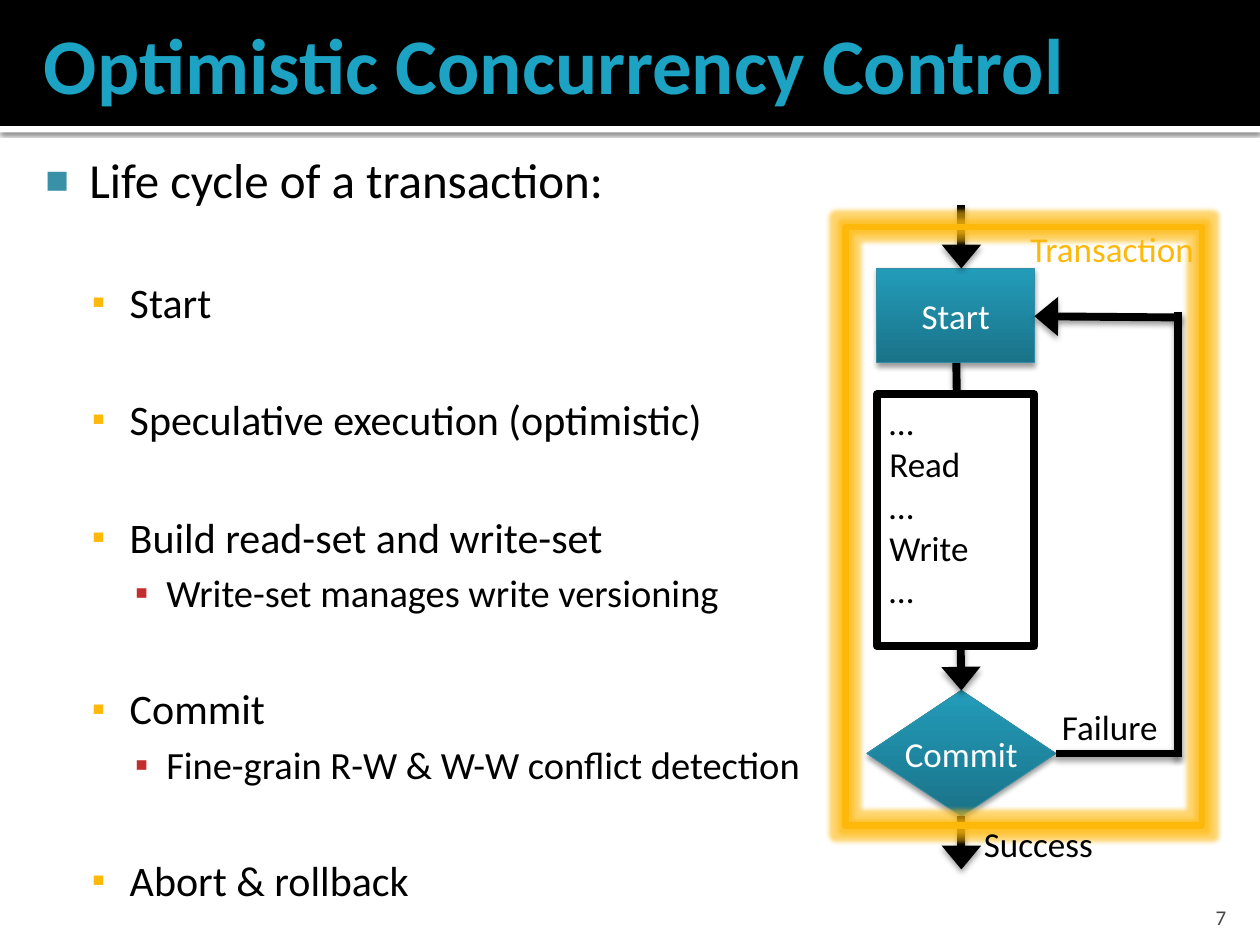
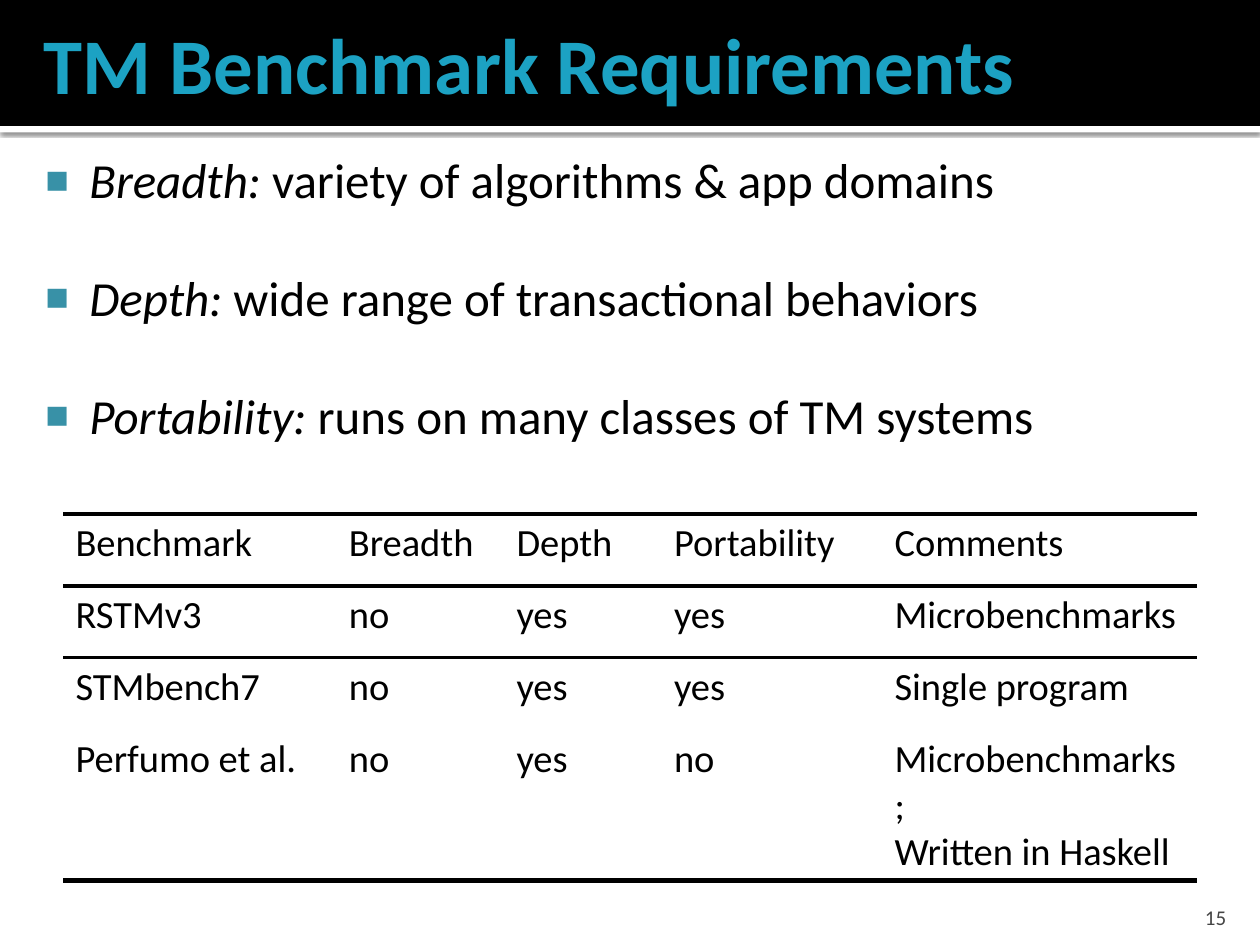
from lxml import etree
from pptx import Presentation
from pptx.dml.color import RGBColor
from pptx.enum.shapes import MSO_CONNECTOR as CONN, MSO_SHAPE as SHAPE
from pptx.enum.text import MSO_ANCHOR as ANCHOR, PP_ALIGN as ALIGN
from pptx.oxml import parse_xml
from pptx.oxml.ns import nsdecls, qn
from pptx.util import Inches, Pt

rgb = RGBColor.from_string
FONT = "Calibri"
BLACK, WHITE, GREY = "000000", "FFFFFF", "454545"
TEAL, AMBER = "1CA2C3", "FEB80A"

# level: left margin, hanging indent (inches), bullet, its colour, its size (%), text size
LEVELS = [
    (0.48, 0.35, "■", "3891A7", 80, 28),
    (0.8, 0.3, "▪", AMBER, 90, 24),
    (1.09, 0.25, "▪", "C32D2E", 100, 22),
]

# title, page number, body paragraphs: (level, space before, italic lead, text)
SLIDES = [
    ("Optimistic Concurrency Control", "7", [
        (0, 0, "", "Life cycle of a transaction:"),
        (1, 38.4, "", "Start"),
        (1, 38.4, "", "Speculative execution (optimistic)"),
        (1, 38.4, "", "Build read-set and write-set"),
        (2, 4.4, "", "Write-set manages write versioning"),
        (1, 38.4, "", "Commit"),
        (2, 4.4, "", "Fine-grain R-W & W-W conflict detection"),
        (1, 38.4, "", "Abort & rollback"),
    ]),
    ("TM Benchmark Requirements", "15", [
        (0, 0, "Breadth:", " variety of algorithms & app domains"),
        (0, 33.7, "Depth:", " wide range of transactional behaviors"),
        (0, 33.7, "Portability:", " runs on many classes of TM systems"),
    ]),
]


def add_run(p, text, size, color, bold=False, italic=False):
    r = p.add_run()
    r.text = text
    f = r.font
    f.name, f.size, f.bold, f.italic = FONT, Pt(size), bold, italic
    f.color.rgb = rgb(color)


def add_effect(sp, tag, color, alpha, **lengths):
    """Append an outer shadow or glow; call it after fill and line are set."""
    attrs = " ".join(f'{k}="{int(v)}"' for k, v in lengths.items())
    sp._element.spPr.append(parse_xml(
        f'<a:effectLst {nsdecls("a")}><a:{tag} {attrs}><a:srgbClr val="{color}">'
        f'<a:alpha val="{alpha * 1000}"/></a:srgbClr></a:{tag}></a:effectLst>'))


prs = Presentation()
prs.slide_width, prs.slide_height = Inches(10), Inches(7.5)
DOWN = 90 * 60000

# Title band, bulleted body and page number
slides = []
for title, number, body in SLIDES:
    s = prs.slides.add_slide(prs.slide_layouts[6])
    slides.append(s)
    for top, height, color in ((1, 0.05, WHITE), (0, 1, BLACK)):
        sp = s.shapes.add_shape(SHAPE.RECTANGLE, 0, Inches(top), Inches(10), Inches(height))
        sp.fill.solid()
        sp.fill.fore_color.rgb = rgb(color)
        sp.line.fill.background()
        if color == WHITE:
            add_effect(sp, "outerShdw", BLACK, 60, blurRad=Pt(2.5), dist=Pt(0.8), dir=DOWN)
        else:
            sp.shadow.inherit = False

    frames = []
    for box, insets, anchor in (
        ((0.25, 0, 9.5, 1), (0.1, 0.05, 0.05, 0.05), ANCHOR.MIDDLE),
        ((0.17, 1.09, 9.67, 6.25), (0.06, 0.1, 0.1, 0.05), ANCHOR.TOP),
        ((8.97, 7.08, 0.86, 0.3), (0.1, 0.05, 0.1, 0), ANCHOR.BOTTOM),
    ):
        tf = s.shapes.add_textbox(*map(Inches, box)).text_frame
        tf.word_wrap, tf.vertical_anchor = True, anchor
        tf.margin_left, tf.margin_top, tf.margin_right, tf.margin_bottom = map(Inches, insets)
        frames.append(tf)
    title_tf, body_tf, number_tf = frames
    add_run(title_tf.paragraphs[0], title, 45, TEAL, bold=True)
    number_tf.paragraphs[0].alignment = ALIGN.RIGHT
    add_run(number_tf.paragraphs[0], number, 12, GREY)

    for i, (level, before, lead, text) in enumerate(body):
        left, hang, bullet, color, percent, size = LEVELS[level]
        p = body_tf.add_paragraph() if i else body_tf.paragraphs[0]
        p.level, p.space_before = level, Pt(before)
        pPr = p._p.get_or_add_pPr()
        pPr.set("marL", str(Inches(left)))
        pPr.set("indent", str(-Inches(hang)))
        clr = etree.SubElement(pPr, qn("a:buClr"))
        etree.SubElement(clr, qn("a:srgbClr"), val=color)
        etree.SubElement(pPr, qn("a:buSzPct"), val=str(percent * 1000))
        etree.SubElement(pPr, qn("a:buFont"), typeface="Arial")
        etree.SubElement(pPr, qn("a:buChar"), char=bullet)
        if lead:
            add_run(p, lead, size, BLACK, italic=True)
        add_run(p, text, size, BLACK)

flow, requirements = slides

# Transaction flow chart
for kind, box, text in (
    (SHAPE.RECTANGLE, (6.96, 2.13, 1.25, 0.75), "Start"),
    (SHAPE.FLOWCHART_DECISION, (6.88, 5.48, 1.5, 1), "Commit"),
):
    sp = flow.shapes.add_shape(kind, *map(Inches, box))
    sp.fill.gradient()
    sp.fill.gradient_angle = 90
    for stop, color in zip(sp.fill.gradient_stops, ("1A7288", "239CBA")):
        stop.color.rgb = rgb(color)
    sp.line.color.rgb, sp.line.width = rgb("348FA6"), Pt(0.5)
    add_effect(sp, "outerShdw", BLACK, 38, blurRad=Pt(3.1), dist=Pt(2), dir=DOWN)
    tf = sp.text_frame
    tf.word_wrap, tf.vertical_anchor = False, ANCHOR.MIDDLE
    tf.paragraphs[0].alignment = ALIGN.CENTER
    add_run(tf.paragraphs[0], text, 20, WHITE)

for ends, arrow in (
    ((7.59, 2.88, 7.63, 5.48), True),
    ((8.38, 5.98, 9.35, 5.98), False),
    ((9.35, 6.01, 9.35, 2.48), False),
    ((9.38, 2.52, 8.21, 2.51), True),
    ((7.63, 6.48, 7.63, 6.9), True),
    ((7.63, 1.63, 7.63, 2.13), True),
):
    line = flow.shapes.add_connector(CONN.STRAIGHT, *map(Inches, ends))
    line.line.color.rgb, line.line.width = rgb(BLACK), Pt(4.5)
    if arrow:
        etree.SubElement(line.line._get_or_add_ln(), qn("a:tailEnd"),
                         type="triangle", w="lg", len="med")
    add_effect(line, "outerShdw", BLACK, 38, blurRad=Pt(3.5), dist=Pt(2), dir=DOWN)

code = flow.shapes.add_shape(SHAPE.RECTANGLE, *map(Inches, (6.96, 3.13, 1.25, 2)))
code.shadow.inherit = False
code.fill.solid()
code.fill.fore_color.rgb = rgb(WHITE)
code.line.color.rgb, code.line.width = rgb(BLACK), Pt(4.5)
tf = code.text_frame
tf.vertical_anchor = ANCHOR.TOP
for i, text in enumerate(("…", "Read", "…", "Write", "…")):
    p = tf.add_paragraph() if i else tf.paragraphs[0]
    p.alignment = ALIGN.LEFT
    add_run(p, text, 20, BLACK)

frame = flow.shapes.add_shape(SHAPE.RECTANGLE, *map(Inches, (6.71, 1.8, 2.83, 4.75)))
frame.fill.background()
frame.line.color.rgb, frame.line.width = rgb(AMBER), Pt(3.78)
add_effect(frame, "glow", AMBER, 60, rad=Pt(5))

for left, top, width, text, color in (
    (8.33, 5.55, 0.97, "Failure", BLACK),
    (7.71, 6.48, 1.07, "Success", BLACK),
    (8.08, 1.76, 1.51, "Transaction", AMBER),
):
    label = flow.shapes.add_textbox(*map(Inches, (left, top, width, 0.44)))
    label.text_frame.word_wrap = False
    add_run(label.text_frame.paragraphs[0], text, 20, color)

# Benchmark comparison table
ROWS = [
    ("Benchmark", "Breadth", "Depth", "Portability", "Comments"),
    ("RSTMv3", "no", "yes", "yes", "Microbenchmarks"),
    ("STMbench7", "no", "yes", "yes", "Single program"),
    ("Perfumo et al.", "no", "yes", "no", "Microbenchmarks;\nWritten in Haskell"),
]
RULES = [3, 2.25, 2.25, 0, 3]  # line weights from top to bottom, 0 for none
NO_STYLE = "{2D5ABB26-0587-4C30-8999-92F81FD0307C}"

table = requirements.shapes.add_table(
    len(ROWS), len(ROWS[0]), *map(Inches, (0.5, 4.08, 9, 4 * 0.57))).table
table.first_row = table.horz_banding = False
table._tbl.tblPr.find(qn("a:tableStyleId")).text = NO_STYLE
for column, width in zip(table.columns, (2.17, 1.33, 1.25, 1.75, 2.5)):
    column.width = Inches(width)
for row, texts, above, below in zip(table.rows, ROWS, RULES, RULES[1:]):
    row.height = Inches(0.57)
    for cell, text in zip(row.cells, texts):
        cell.fill.background()
        tcPr = cell._tc.get_or_add_tcPr()
        for i, (side, weight) in enumerate((("lnT", above), ("lnB", below))):
            paint = (f'<a:solidFill><a:srgbClr val="{BLACK}"/></a:solidFill>'
                     if weight else '<a:noFill/>')
            tcPr.insert(i, parse_xml(
                f'<a:{side} {nsdecls("a")} w="{Pt(weight)}">{paint}</a:{side}>'))
        tf = cell.text_frame
        for i, part in enumerate(text.split("\n")):
            p = tf.add_paragraph() if i else tf.paragraphs[0]
            add_run(p, part, 22, BLACK)

prs.save("out.pptx")
